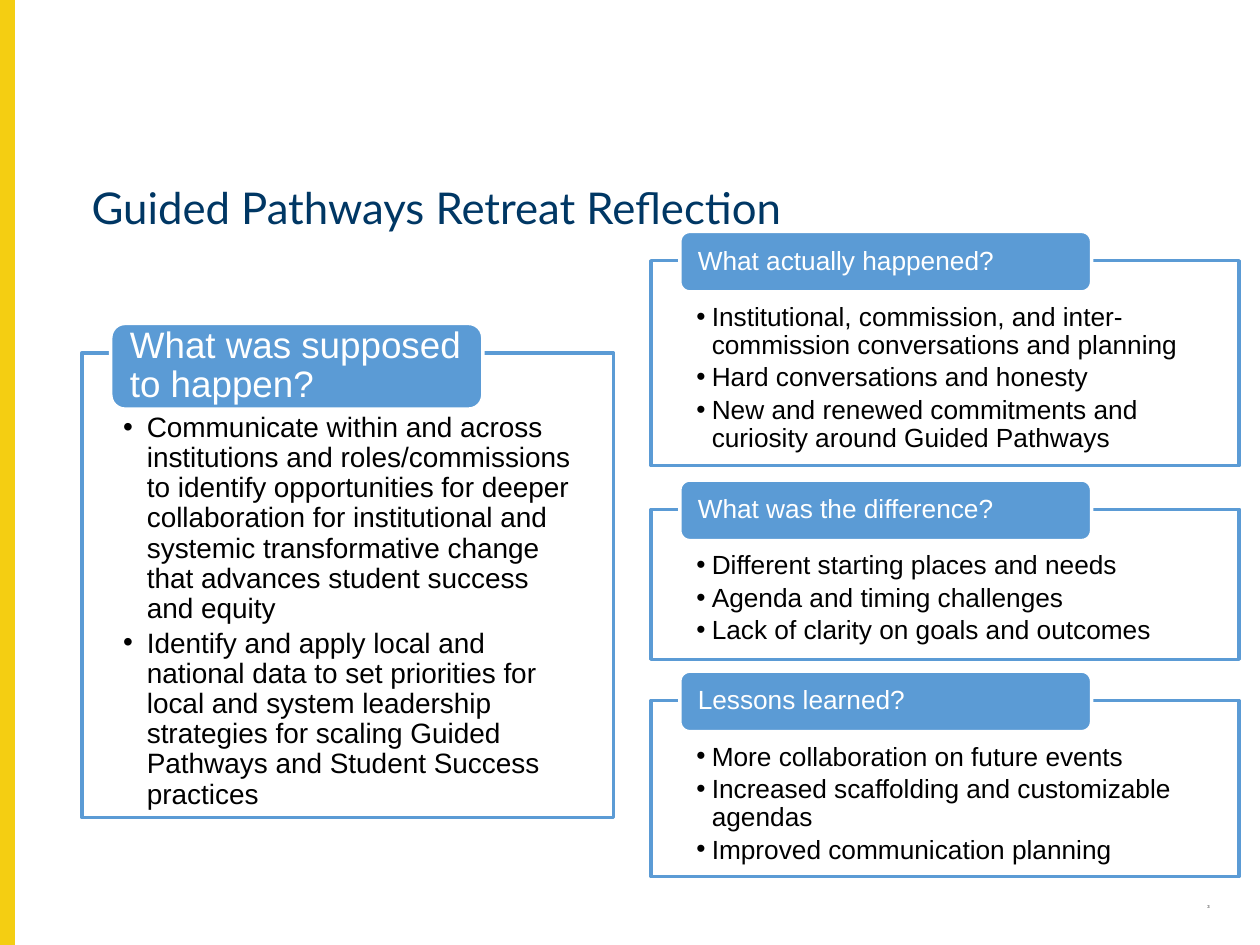
from dataclasses import dataclass

from lxml import etree
from pptx import Presentation
from pptx.dml.color import RGBColor
from pptx.enum.shapes import MSO_SHAPE
from pptx.enum.text import MSO_ANCHOR, MSO_AUTO_SIZE, PP_ALIGN
from pptx.oxml.ns import qn
from pptx.util import Pt

RECTANGLE = MSO_SHAPE.RECTANGLE
ROUNDED = MSO_SHAPE.ROUNDED_RECTANGLE
LEFT, RIGHT = PP_ALIGN.LEFT, PP_ALIGN.RIGHT
TOP, MIDDLE, BOTTOM = MSO_ANCHOR.TOP, MSO_ANCHOR.MIDDLE, MSO_ANCHOR.BOTTOM


@dataclass(frozen=True)
class Theme:
    blue: RGBColor = RGBColor(0x5B, 0x9B, 0xD5)
    navy: RGBColor = RGBColor(0x00, 0x37, 0x64)
    yellow: RGBColor = RGBColor(0xF4, 0xCE, 0x12)
    white: RGBColor = RGBColor(0xFF, 0xFF, 0xFF)
    black: RGBColor = RGBColor(0x00, 0x00, 0x00)
    heading_font: str = "Lato"
    body_font: str = "Arial"
    title_size: float = 25
    number_size: float = 2.3
    main_header_size: float = 21
    main_body_size: float = 16
    side_size: float = 15


theme = Theme()


def add_box(kind, left, top, width, height, fill, line, line_width):
    shape = slide.shapes.add_shape(kind, Pt(left), Pt(top), Pt(width), Pt(height))
    shape.shadow.inherit = False
    shape.fill.solid()
    shape.fill.fore_color.rgb = fill
    shape.line.color.rgb = line
    shape.line.width = Pt(line_width)
    return shape


def write_text(shape, lines, font, size, color, insets, anchor=TOP,
               align=LEFT, spacing=0.9, after=0, bullet_indent=0):
    """Fill the shape with one paragraph per line; insets are left, top, right, bottom."""
    frame = shape.text_frame
    frame.word_wrap = True
    frame.auto_size = MSO_AUTO_SIZE.NONE
    frame.vertical_anchor = anchor
    frame.margin_left, frame.margin_top, frame.margin_right, frame.margin_bottom = map(Pt, insets)
    for index, line in enumerate(lines):
        paragraph = frame.paragraphs[0] if index == 0 else frame.add_paragraph()
        paragraph.alignment = align
        paragraph.line_spacing = spacing
        paragraph.space_before = Pt(0)
        paragraph.space_after = Pt(after)
        if bullet_indent:
            properties = paragraph._p.get_or_add_pPr()
            properties.set("marL", str(Pt(bullet_indent)))
            properties.set("indent", str(-Pt(bullet_indent)))
            etree.SubElement(properties, qn("a:buFont")).set("typeface", font)
            etree.SubElement(properties, qn("a:buChar")).set("char", "•")
        run = paragraph.add_run()
        run.text = line
        run.font.name = font
        run.font.size = Pt(size)
        run.font.color.rgb = color


presentation = Presentation()
presentation.slide_width = Pt(720)
presentation.slide_height = Pt(540)
slide = presentation.slides.add_slide(presentation.slide_layouts[5])

add_box(RECTANGLE, 0, 0, 8, 540, theme.yellow, theme.yellow, 1)

title = slide.shapes.title
title.left, title.top, title.width, title.height = Pt(45.2), Pt(79.2), Pt(653.8), Pt(61.9)
write_text(title, ["Guided Pathways Retreat Reflection"], theme.heading_font,
           theme.title_size, theme.navy, (7.2, 7.2, 7.2, 7.2), anchor=BOTTOM)

number = slide.shapes.add_textbox(Pt(662.4), Pt(514), Pt(36), Pt(15))
write_text(number, ["3"], theme.heading_font, theme.number_size, theme.black,
           (7.2, 3.6, 7.2, 3.6), align=RIGHT, spacing=0.7)

# Each column: left, width, header height, header size, body size,
# side inset, top inset, bullet indent, panels (top, height, question, answers)
columns = [
    (372, 336.2, 34.6, theme.side_size, theme.side_size, 26, 24.5, 8.8, [
        (149, 117.1, "What actually happened?", [
            "Institutional, commission, and inter-commission conversations and planning",
            "Hard conversations and honesty",
            "New and renewed commitments and curiosity around Guided Pathways"]),
        (291.1, 85.7, "What was the difference?", [
            "Different starting places and needs",
            "Agenda and timing challenges",
            "Lack of clarity on goals and outcomes"]),
        (400.3, 100.6, "Lessons learned?", [
            "More collaboration on future events",
            "Increased scaffolding and customizable agendas",
            "Improved communication planning"]),
    ]),
    (46.8, 303.8, 49, theme.main_header_size, theme.main_body_size, 23.6, 34.5, 13.5, [
        (201.6, 265.7, "What was supposed to happen?", [
            "Communicate within and across institutions and roles/commissions to identify "
            "opportunities for deeper collaboration for institutional and systemic "
            "transformative change that advances student success and equity",
            "Identify and apply local and national data to set priorities for local and "
            "system leadership strategies for scaling Guided Pathways and Student Success "
            "practices"]),
    ]),
]
HEADER_RISE = 16.8
HEADER_INDENT = 16.5

for (left, width, header_height, header_size, body_size,
     side_inset, top_inset, bullet_indent, panels) in columns:
    for top, height, question, answers in panels:
        panel = add_box(RECTANGLE, left, top, width, height, theme.white, theme.blue, 2)
        panel_color = panel.fill._xPr.find(qn("a:solidFill"))[0]
        etree.SubElement(panel_color, qn("a:alpha")).set("val", "90000")
        write_text(panel, answers, theme.body_font, body_size, theme.black,
                   (side_inset, top_inset, side_inset, 8.6),
                   after=0.15 * body_size, bullet_indent=bullet_indent)

        header = add_box(ROUNDED, left + HEADER_INDENT, top - HEADER_RISE,
                         0.7 * width, header_height, theme.blue, theme.white, 2)
        write_text(header, [question], theme.body_font, header_size, theme.white,
                   (8.6, 0, 4, 0), anchor=MIDDLE)

presentation.save("out.pptx")
